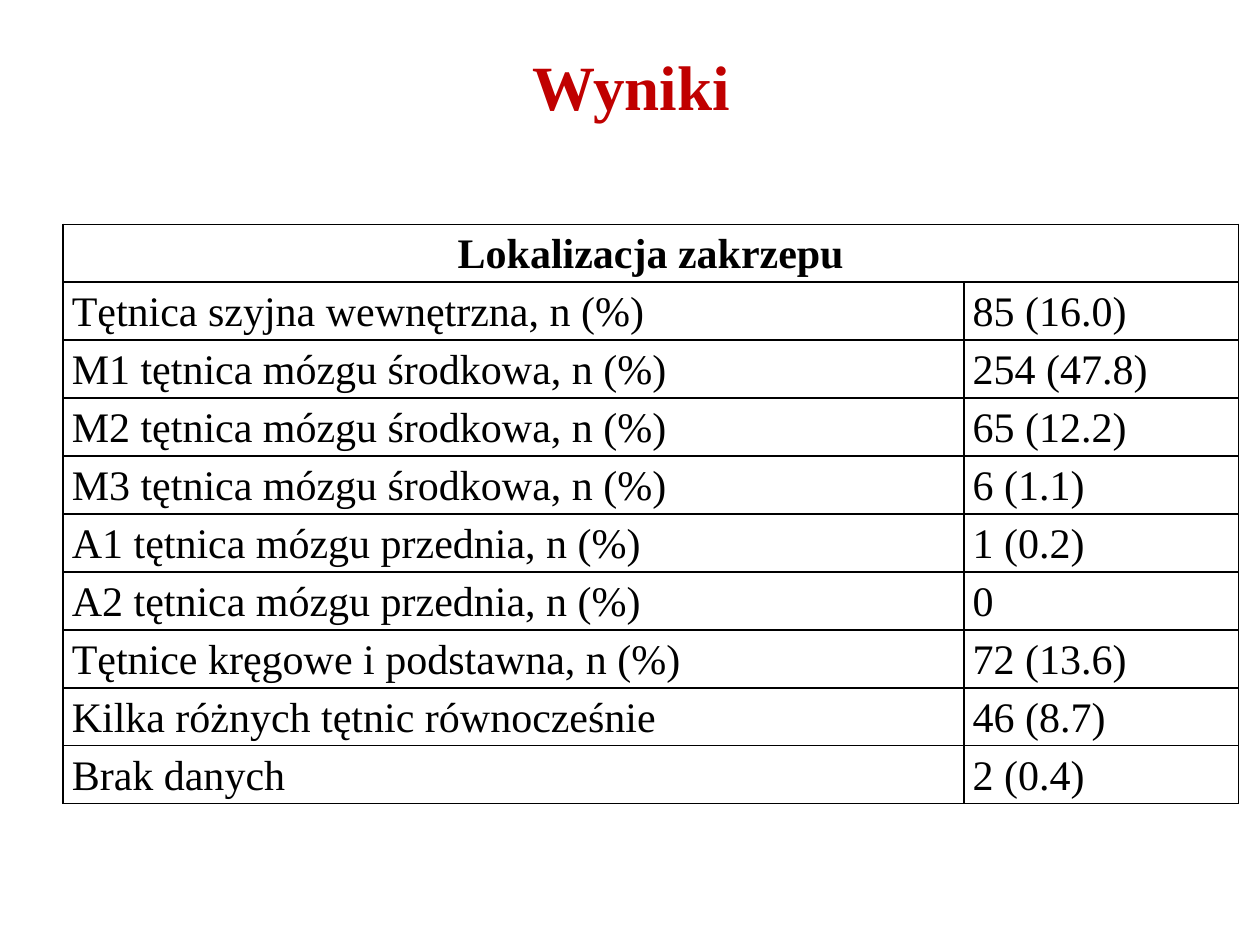
from dataclasses import dataclass

from lxml.etree import SubElement
from pptx import Presentation
from pptx.dml.color import RGBColor
from pptx.enum.text import MSO_ANCHOR, PP_ALIGN
from pptx.oxml.ns import qn
from pptx.util import Inches, Pt

# Content
TITLE = "Wyniki"
HEADER = "Lokalizacja zakrzepu"
ROWS = [
    ("Tętnica szyjna wewnętrzna, n (%)", "85 (16.0)"),
    ("M1 tętnica mózgu środkowa, n (%)", "254 (47.8)"),
    ("M2 tętnica mózgu środkowa, n (%)", "65 (12.2)"),
    ("M3 tętnica mózgu środkowa, n (%)", "6 (1.1)"),
    ("A1 tętnica mózgu przednia, n (%)", "1 (0.2)"),
    ("A2 tętnica mózgu przednia, n (%)", "0"),
    ("Tętnice kręgowe i podstawna, n (%)", "72 (13.6)"),
    ("Kilka różnych tętnic równocześnie", "46 (8.7)"),
    ("Brak danych", "2 (0.4)"),
]
COLUMN_WIDTHS = (7.15, 2.18)
ROW_HEIGHT = 0.46


@dataclass(frozen=True)
class Theme:
    font: str = "Times New Roman"
    title_size: int = 36
    table_size: int = 24
    title_color: str = "C00000"
    text_color: str = "000000"
    border_color: str = "000000"
    fill_color: str = "FFFFFF"
    border_width: int = 1


THEME = Theme()


def add_text(paragraph, text, size, color, bold=False):
    run = paragraph.add_run()
    run.text = text
    run.font.name = THEME.font
    run.font.size = Pt(size)
    run.font.bold = bold
    run.font.color.rgb = RGBColor.from_string(color)


def style_cell(cell):
    cell.margin_left = cell.margin_right = Inches(0.07)
    cell.margin_top = cell.margin_bottom = 0
    # Borders must come before the fill in the cell properties
    properties = cell._tc.get_or_add_tcPr()
    for side in ("a:lnL", "a:lnR", "a:lnT", "a:lnB"):
        line = SubElement(properties, qn(side), w=str(Pt(THEME.border_width)))
        fill = SubElement(line, qn("a:solidFill"))
        SubElement(fill, qn("a:srgbClr"), val=THEME.border_color)
    cell.fill.solid()
    cell.fill.fore_color.rgb = RGBColor.from_string(THEME.fill_color)


def write_cell(cell, text, bold=False, alignment=PP_ALIGN.LEFT):
    paragraph = cell.text_frame.paragraphs[0]
    paragraph.alignment = alignment
    paragraph.line_spacing = 1.15
    add_text(paragraph, text, THEME.table_size, THEME.text_color, bold)


def add_title(slide):
    box = slide.shapes.add_textbox(Inches(0.51), Inches(0.33), Inches(9), Inches(1.25))
    frame = box.text_frame
    frame.word_wrap = True
    frame.vertical_anchor = MSO_ANCHOR.TOP
    paragraph = frame.paragraphs[0]
    paragraph.alignment = PP_ALIGN.CENTER
    add_text(paragraph, TITLE, THEME.title_size, THEME.title_color, bold=True)


def add_results_table(slide):
    row_count = len(ROWS) + 1
    table = slide.shapes.add_table(
        row_count, len(COLUMN_WIDTHS), Inches(0.5), Inches(1.78),
        Inches(sum(COLUMN_WIDTHS)), Inches(ROW_HEIGHT * row_count)).table
    table.first_row = table.horz_banding = False
    for column, width in zip(table.columns, COLUMN_WIDTHS):
        column.width = Inches(width)
    for row in table.rows:
        row.height = Inches(ROW_HEIGHT)
        for cell in row.cells:
            style_cell(cell)

    # Header across both columns, then the data rows
    table.cell(0, 0).merge(table.cell(0, 1))
    write_cell(table.cell(0, 0), HEADER, bold=True, alignment=PP_ALIGN.CENTER)
    for row_index, values in enumerate(ROWS, start=1):
        for column_index, value in enumerate(values):
            write_cell(table.cell(row_index, column_index), value)


def main():
    presentation = Presentation()
    presentation.slide_width = Inches(10)
    presentation.slide_height = Inches(7.5)
    slide = presentation.slides.add_slide(presentation.slide_layouts[6])
    add_results_table(slide)
    add_title(slide)
    presentation.save("out.pptx")


if __name__ == "__main__":
    main()
